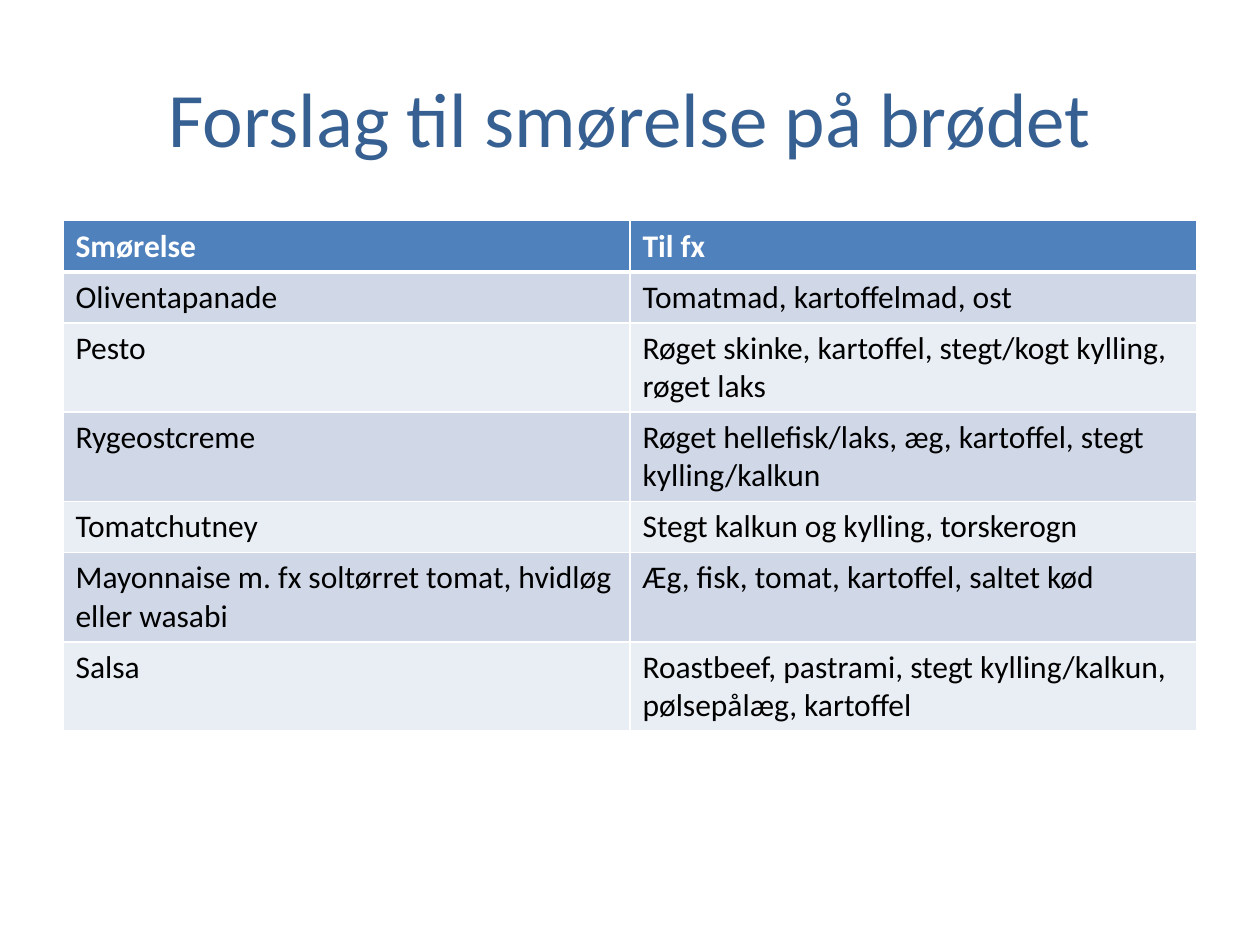
from dataclasses import dataclass

from lxml import etree
from pptx import Presentation
from pptx import util as u
from pptx.dml.color import RGBColor
from pptx.enum import text
from pptx.oxml import ns

FONT = "Calibri"
WHITE, BLACK = "FFFFFF", "000000"
TITLE_BLUE, HEADER_BLUE = "376092", "4F81BD"
BANDS = ("D0D8E8", "E9EDF4")
LEFT, WIDTH = u.Cm(1.27), u.Cm(22.86)
THIN, THICK = u.Pt(1), u.Pt(3)


@dataclass(frozen=True)
class Spread:
    name: str
    goes_with: str
    lines: int = 1


HEADER = Spread("Smørelse", "Til fx")
SPREADS = [
    Spread("Oliventapanade", "Tomatmad, kartoffelmad, ost"),
    Spread("Pesto", "Røget skinke, kartoffel, stegt/kogt kylling, røget laks", 2),
    Spread("Rygeostcreme", "Røget hellefisk/laks, æg, kartoffel, stegt kylling/kalkun", 2),
    Spread("Tomatchutney", "Stegt kalkun og kylling, torskerogn"),
    Spread("Mayonnaise m. fx soltørret tomat, hvidløg eller wasabi",
           "Æg, fisk, tomat, kartoffel, saltet kød", 2),
    Spread("Salsa", "Roastbeef, pastrami, stegt kylling/kalkun, pølsepålæg, kartoffel", 2),
]
ROW_HEIGHTS = {1: u.Cm(1.03), 2: u.Cm(1.8)}


def rgb(value: str) -> RGBColor:
    return RGBColor.from_string(value)


def add_run(paragraph, words: str, size: float, color: str, bold: bool = False) -> None:
    run = paragraph.add_run()
    run.text = words
    run.font.name = FONT
    run.font.size = u.Pt(size)
    run.font.bold = bold
    run.font.color.rgb = rgb(color)


def set_borders(cell, top: int, bottom: int) -> None:
    """Put white borders ahead of the fill, as the schema orders them."""
    properties = cell._tc.get_or_add_tcPr()
    widths = {"a:lnL": THIN, "a:lnR": THIN, "a:lnT": top, "a:lnB": bottom}
    for position, (tag, width) in enumerate(widths.items()):
        line = etree.Element(ns.qn(tag), w=str(int(width)))
        fill = etree.SubElement(line, ns.qn("a:solidFill"))
        etree.SubElement(fill, ns.qn("a:srgbClr"), val=WHITE)
        properties.insert(position, line)


def add_title(slide, words: str) -> None:
    box = slide.shapes.add_textbox(LEFT, u.Cm(0.76), WIDTH, u.Cm(3.18))
    frame = box.text_frame
    frame.word_wrap = True
    frame.vertical_anchor = text.MSO_ANCHOR.MIDDLE
    heading = frame.paragraphs[0]
    heading.alignment = text.PP_ALIGN.CENTER
    add_run(heading, words, 44, TITLE_BLUE)


def add_spread_table(slide, header: Spread, spreads: list[Spread]) -> None:
    rows = [header, *spreads]
    height = sum(ROW_HEIGHTS[row.lines] for row in rows)
    table = slide.shapes.add_table(len(rows), 2, LEFT, u.Cm(4.45), WIDTH, height).table
    for index, row in enumerate(rows):
        table.rows[index].height = ROW_HEIGHTS[row.lines]
        is_header = index == 0
        fill = HEADER_BLUE if is_header else BANDS[(index - 1) % 2]
        for column, words in enumerate((row.name, row.goes_with)):
            cell = table.cell(index, column)
            cell.fill.solid()
            cell.fill.fore_color.rgb = rgb(fill)
            set_borders(cell, top=THICK if index == 1 else THIN,
                        bottom=THICK if is_header else THIN)
            add_run(cell.text_frame.paragraphs[0], words, 18,
                    WHITE if is_header else BLACK, bold=is_header)


def main() -> None:
    deck = Presentation()
    deck.slide_width, deck.slide_height = u.Cm(25.4), u.Cm(19.05)
    slide = deck.slides.add_slide(deck.slide_layouts[6])

    # Heading
    add_title(slide, "Forslag til smørelse på brødet")

    # Spreads and what they go with
    add_spread_table(slide, HEADER, SPREADS)

    deck.save("out.pptx")


if __name__ == "__main__":
    main()
